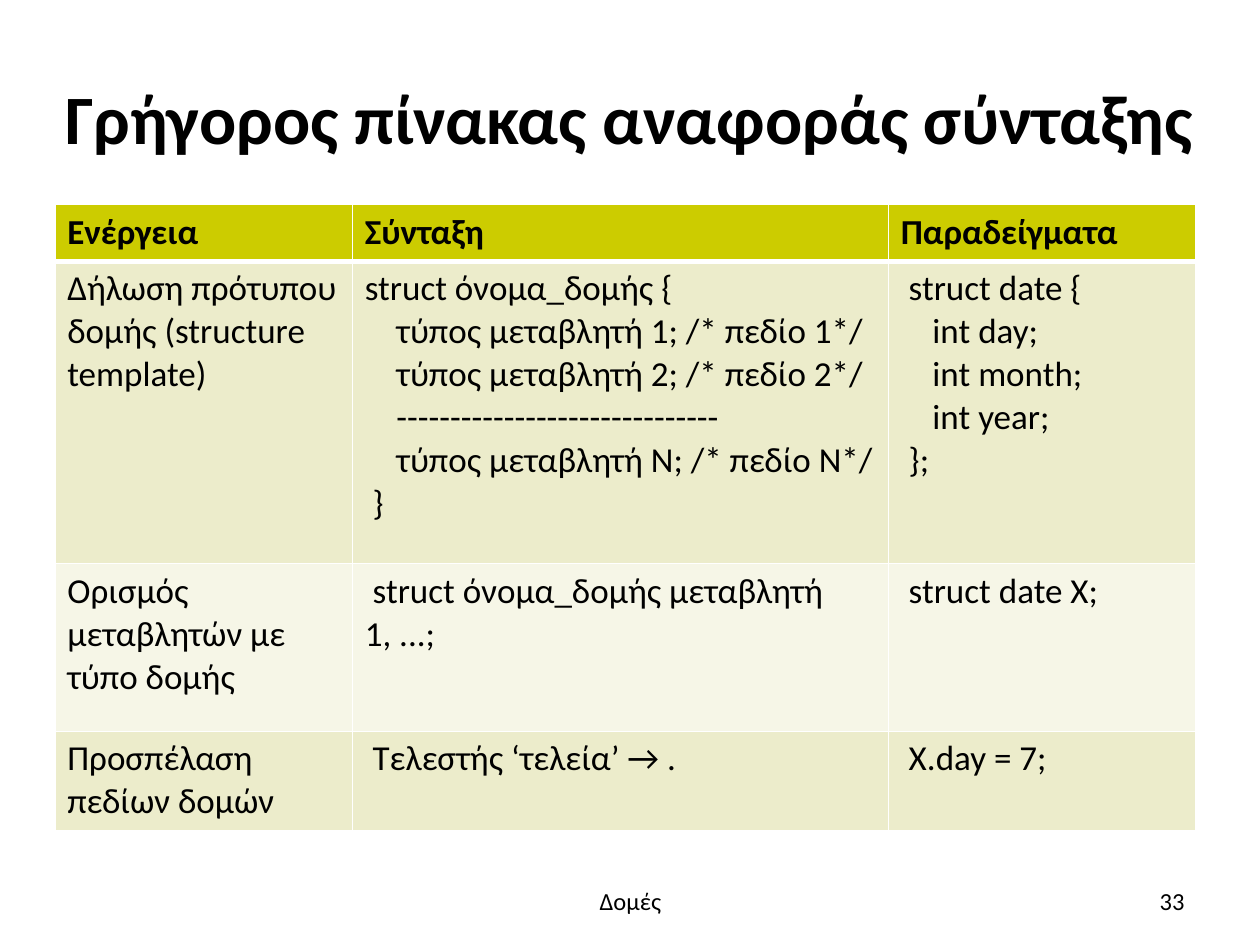
import pptx
import pptx.util
import pptx.dml.color
import pptx.enum.text
import pptx.oxml.ns
from lxml import etree

Pt = pptx.util.Pt
ALIGN = pptx.enum.text.PP_ALIGN
FONT = "Calibri"
COLORS = {"text": "000000", "header": "CCCC00", "odd": "ECECCB", "even": "F6F6E7", "border": "FFFFFF"}

TEXT_BOXES = [
    ("Γρήγορος πίνακας αναφοράς σύνταξης", (25.2, 21.6, 668.9, 90), 39.6, True, ALIGN.CENTER),
    ("Δομές", (246.2, 500.4, 228.2, 28.8), 14, False, ALIGN.CENTER),
    ("33", (516.2, 500.4, 167.8, 28.8), 14, False, ALIGN.RIGHT),
]
TABLE_LEFT, TABLE_TOP = 31.3, 116.9
COLUMN_WIDTHS = [170, 306.3, 175.8]
ROW_HEIGHTS = [32.4, 172.8, 95.8, 56.6]
ROWS = [
    ["Ενέργεια", "Σύνταξη", "Παραδείγματα"],
    [
        "Δήλωση πρότυπου δομής (structure template)",
        "struct όνομα_δομής {\n"
        "    τύπος μεταβλητή 1; /* πεδίο 1*/\n"
        "    τύπος μεταβλητή 2; /* πεδίο 2*/\n"
        "    ------------------------------\n"
        "    τύπος μεταβλητή N; /* πεδίο N*/\n"
        " }",
        " struct date {\n    int day;\n    int month;\n    int year;\n };",
    ],
    ["Ορισμός μεταβλητών με τύπο δομής", " struct όνομα_δομής μεταβλητή 1, ...;", " struct date X;"],
    ["Προσπέλαση πεδίων δομών", "Τελεστής ‘τελεία’ → .", " X.day = 7;"],
]
INDENTED_CELL = (3, 1)
INDENT = 4.5


def color(name):
    return pptx.dml.color.RGBColor.from_string(COLORS[name])


def format_text(text_frame, size, bold, alignment):
    for paragraph in text_frame.paragraphs:
        paragraph.alignment = alignment
        for run in paragraph.runs:
            run.font.name = FONT
            run.font.size = Pt(size)
            run.font.bold = bold
            run.font.color.rgb = color("text")


def add_text(slide, text, box, size, bold, alignment):
    text_frame = slide.shapes.add_textbox(*map(Pt, box)).text_frame
    text_frame.word_wrap = True
    text_frame.vertical_anchor = pptx.enum.text.MSO_ANCHOR.MIDDLE
    text_frame.text = text
    format_text(text_frame, size, bold, alignment)


def set_borders(cell, widths):
    properties = cell._tc.get_or_add_tcPr()
    qn = pptx.oxml.ns.qn
    for side, width in widths.items():
        line = etree.SubElement(properties, qn("a:ln" + side), w=str(Pt(width)))
        fill = etree.SubElement(line, qn("a:solidFill"))
        etree.SubElement(fill, qn("a:srgbClr"), val=COLORS["border"])


def add_syntax_table(slide):
    table = slide.shapes.add_table(
        len(ROWS), len(COLUMN_WIDTHS), Pt(TABLE_LEFT), Pt(TABLE_TOP),
        Pt(sum(COLUMN_WIDTHS)), Pt(sum(ROW_HEIGHTS))).table
    for column, width in zip(table.columns, COLUMN_WIDTHS):
        column.width = Pt(width)
    for row_index, texts in enumerate(ROWS):
        table.rows[row_index].height = Pt(ROW_HEIGHTS[row_index])
        is_header = row_index == 0
        fill_name = "header" if is_header else "odd" if row_index % 2 else "even"
        top_width = 3 if row_index == 1 else 1
        bottom_width = 3 if is_header else 1
        for column_index, text in enumerate(texts):
            cell = table.cell(row_index, column_index)
            cell.text_frame.text = text
            format_text(cell.text_frame, 20, is_header, ALIGN.LEFT)
            if (row_index, column_index) == INDENTED_CELL:
                cell.margin_left = Pt(7.2 + INDENT)
            set_borders(cell, {"L": 1, "R": 1, "T": top_width, "B": bottom_width})
            cell.fill.solid()
            cell.fill.fore_color.rgb = color(fill_name)


def main():
    presentation = pptx.Presentation()
    presentation.slide_width, presentation.slide_height = Pt(720), Pt(540)
    slide = presentation.slides.add_slide(presentation.slide_layouts[6])
    add_syntax_table(slide)
    for text_box in TEXT_BOXES:
        add_text(slide, *text_box)
    presentation.save("out.pptx")


if __name__ == "__main__":
    main()
